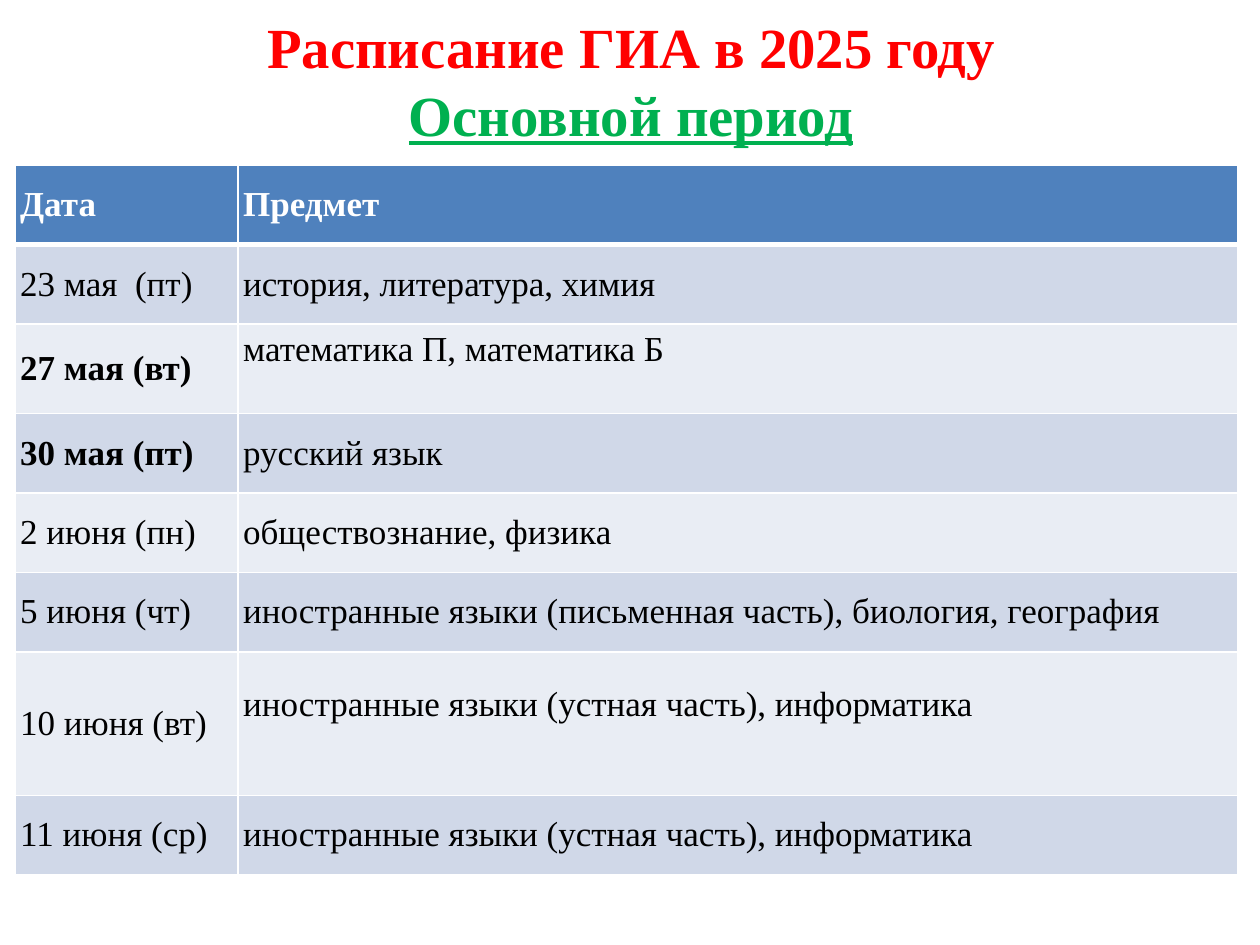
import enum

import pptx
import pptx.dml.color
import pptx.enum.text
import pptx.oxml
import pptx.oxml.ns
import pptx.util

Inches = pptx.util.Inches
Pt = pptx.util.Pt
MIDDLE = pptx.enum.text.MSO_ANCHOR.MIDDLE


class Theme:
    FONT = "Times New Roman"
    TITLE_SIZE = 32.4
    TABLE_SIZE = 20
    RED = "FF0000"
    GREEN = "00B050"
    WHITE = "FFFFFF"
    BLACK = "000000"
    HEADER_FILL = "4F81BD"
    BAND_FILLS = ("D0D8E8", "E9EDF4")
    RULE = 1
    HEADER_RULE = 3


class Row(enum.Enum):
    """Row height and bottom margin of the subject cell, in inches."""
    NORMAL = (0.63, 0.04)
    RAISED = (0.7, 0.34)
    TALL = (1.14, 0.34)


COLUMN_WIDTHS = (1.77, 7.93)
CELL_MARGIN = 0.04
HEADINGS = ("Дата", "Предмет")
# Date, subjects, compulsory exam (bold date), row type
EXAMS = (
    ("23 мая  (пт)", "история, литература, химия", False, Row.NORMAL),
    ("27 мая (вт)", "математика П, математика Б", True, Row.RAISED),
    ("30 мая (пт)", "русский язык", True, Row.NORMAL),
    ("2 июня (пн)", "обществознание, физика", False, Row.NORMAL),
    ("5 июня (чт)", "иностранные языки (письменная часть), биология, география",
     False, Row.NORMAL),
    ("10 июня (вт)", "иностранные языки (устная часть), информатика", False, Row.TALL),
    ("11 июня (ср)", "иностранные языки (устная часть), информатика", False, Row.NORMAL),
)


def rgb(color):
    return pptx.dml.color.RGBColor.from_string(color)


def write(paragraph, text, *, size, color, bold=False, underline=False):
    run = paragraph.add_run()
    run.text = text
    font = run.font
    font.name = Theme.FONT
    font.size = Pt(size)
    font.bold = bold
    font.underline = underline
    font.color.rgb = rgb(color)


def add_title(slide, left, top, width, height):
    frame = slide.shapes.add_textbox(left, top, width, height).text_frame
    frame.word_wrap = True
    frame.vertical_anchor = MIDDLE
    paragraph = frame.paragraphs[0]
    paragraph.alignment = pptx.enum.text.PP_ALIGN.CENTER
    write(paragraph, "Расписание ГИА в 2025 году",
          size=Theme.TITLE_SIZE, color=Theme.RED, bold=True)
    paragraph.add_line_break()
    write(paragraph, "Основной период",
          size=Theme.TITLE_SIZE, color=Theme.GREEN, bold=True, underline=True)


def set_borders(cell, top, bottom):
    """Draw white rules; top and bottom are widths in points."""
    properties = cell._tc.get_or_add_tcPr()
    namespace = pptx.oxml.ns.nsdecls("a")
    for side, width in zip("LRTB", (Theme.RULE, Theme.RULE, top, bottom)):
        properties.append(pptx.oxml.parse_xml(
            f'<a:ln{side} {namespace} w="{Pt(width)}"><a:solidFill>'
            f'<a:srgbClr val="{Theme.WHITE}"/></a:solidFill></a:ln{side}>'))


def fill_cell(cell, text, fill, *, color=Theme.BLACK, bold=False,
              margin_bottom=CELL_MARGIN, top=Theme.RULE, bottom=Theme.RULE):
    set_borders(cell, top, bottom)
    cell.fill.solid()
    cell.fill.fore_color.rgb = rgb(fill)
    cell.vertical_anchor = MIDDLE
    cell.margin_left = cell.margin_right = cell.margin_top = Inches(CELL_MARGIN)
    cell.margin_bottom = Inches(margin_bottom)
    write(cell.text_frame.paragraphs[0], text,
          size=Theme.TABLE_SIZE, color=color, bold=bold)


def add_schedule(slide, left, top, width):
    heights = [Row.NORMAL.value[0]] + [kind.value[0] for *_, kind in EXAMS]
    table = slide.shapes.add_table(
        len(heights), len(HEADINGS), left, top, width, Inches(sum(heights))).table
    for column, share in zip(table.columns, COLUMN_WIDTHS):
        column.width = int(width * share / sum(COLUMN_WIDTHS))
    for row, height in zip(table.rows, heights):
        row.height = Inches(height)

    for index, heading in enumerate(HEADINGS):
        fill_cell(table.cell(0, index), heading, Theme.HEADER_FILL,
                  color=Theme.WHITE, bold=True, bottom=Theme.HEADER_RULE)
    for index, (date, subjects, compulsory, kind) in enumerate(EXAMS):
        fill = Theme.BAND_FILLS[index % 2]
        rule = Theme.RULE if index else Theme.HEADER_RULE
        fill_cell(table.cell(index + 1, 0), date, fill, bold=compulsory, top=rule)
        fill_cell(table.cell(index + 1, 1), subjects, fill,
                  margin_bottom=kind.value[1], top=rule)


def main():
    presentation = pptx.Presentation()
    presentation.slide_width = Inches(10)
    presentation.slide_height = Inches(7.5)
    slide = presentation.slides.add_slide(presentation.slide_layouts[6])
    add_title(slide, Inches(0.51), Inches(0.01), Inches(9), Inches(1.25))
    add_schedule(slide, Inches(0.12), Inches(1.31), Inches(9.7))
    presentation.save("out.pptx")


if __name__ == "__main__":
    main()
